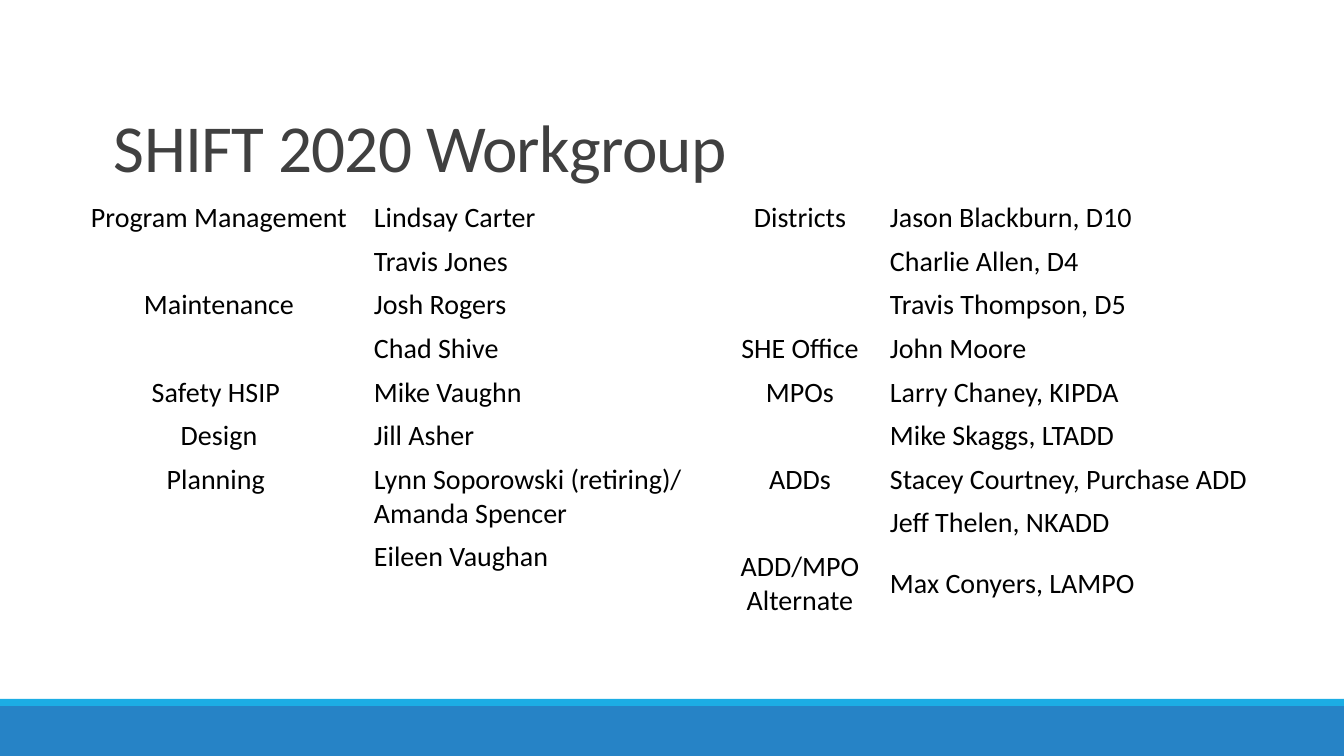
from lxml import etree
from pptx import Presentation
from pptx.dml.color import RGBColor
from pptx.enum.shapes import MSO_CONNECTOR, MSO_SHAPE
from pptx.enum.text import MSO_ANCHOR, PP_ALIGN
from pptx.oxml.ns import qn
from pptx.util import Emu, Pt

RECT = MSO_SHAPE.RECTANGLE
LINE = MSO_CONNECTOR.STRAIGHT
LEFT, CENTER = PP_ALIGN.LEFT, PP_ALIGN.CENTER
TOP, MIDDLE, BOTTOM = MSO_ANCHOR.TOP, MSO_ANCHOR.MIDDLE, MSO_ANCHOR.BOTTOM

WIDE, HIGH = 1344, 756
SCALE = 12192000 / WIDE
FONT = "Calibri"
PAD = 10
ROW = 40

STAFF = [
    ("Program Management", "Lindsay Carter"),
    ("", "Travis Jones"),
    ("Maintenance", "Josh Rogers"),
    ("", "Chad Shive"),
    ("Safety HSIP ", "Mike Vaughn"),
    ("Design", "Jill Asher"),
    ("Planning ", "Lynn Soporowski (retiring)/ Amanda Spencer"),
    ("", "Eileen Vaughan"),
]
AREAS = [
    ("Districts", "Jason Blackburn, D10"),
    ("", "Charlie Allen, D4"),
    ("", "Travis Thompson, D5"),
    ("SHE Office", "John Moore"),
    ("MPOs", "Larry Chaney, KIPDA"),
    ("", "Mike Skaggs, LTADD"),
    ("ADDs", "Stacey Courtney, Purchase ADD"),
    ("", "Jeff Thelen, NKADD"),
    ("ADD/MPO\nAlternate", "Max Conyers, LAMPO"),
]


def px(n):
    return Emu(round(n * SCALE))


def color(code):
    return RGBColor.from_string(code)


def style(para, size, code, align=LEFT):
    para.alignment = align
    para.font.name = FONT
    para.font.size = Pt(size)
    para.font.color.rgb = color(code)


def add_bar(slide, x, y, w, h, code):
    bar = slide.shapes.add_shape(RECT, px(x), px(y), px(w), px(h))
    bar.shadow.inherit = False
    bar.fill.solid()
    bar.fill.fore_color.rgb = color(code)
    bar.line.fill.background()


def add_foot(slide, x, y, w, h):
    strip = 7
    add_bar(slide, x, y + strip, w, h - strip, "2683C6")
    add_bar(slide, x, y, w, strip, "1CADE4")


def add_title(slide, x, y, w, h, text):
    # Rule under the title
    rule = slide.shapes.add_connector(
        LINE, px(x + 28), px(y + h), px(x + 1127), px(y + h))
    rule.line.color.rgb = color("808080")
    rule.line.width = Pt(0.5)
    etree.SubElement(rule._element.spPr, qn("a:effectLst"))

    # Title text
    box = slide.shapes.add_textbox(px(x), px(y), px(w), px(h))
    frame = box.text_frame
    frame.word_wrap = True
    frame.vertical_anchor = BOTTOM
    para = frame.paragraphs[0]
    run = para.add_run()
    run.text = text
    style(para, 48, "404040")
    para.line_spacing = 0.85
    run._r.get_or_add_rPr().set("spc", "-50")


def add_roster(slide, x, y, widths, rows):
    grid = slide.shapes.add_table(
        len(rows), len(widths), px(x), px(y),
        px(sum(widths)), px(ROW * len(rows))).table
    grid.first_row = False
    grid.horz_banding = False
    for col, wide in zip(grid.columns, widths):
        col.width = px(wide)
    for r, (group, name) in enumerate(rows):
        for c, (text, align) in enumerate([(group, CENTER), (name, LEFT)]):
            cell = grid.cell(r, c)
            cell.fill.background()
            cell.margin_left = cell.margin_right = cell.margin_top = px(PAD)
            cell.margin_bottom = 0
            # A name centres beside a two-line group
            cell.vertical_anchor = MIDDLE if c and "\n" in group else TOP
            cell.text = text
            for para in cell.text_frame.paragraphs:
                style(para, 20, "000000", align)


def main():
    deck = Presentation()
    deck.slide_width, deck.slide_height = px(WIDE), px(HIGH)
    slide = deck.slides.add_slide(deck.slide_layouts[6])
    add_foot(slide, 0, 699, WIDE, HIGH - 699)
    add_title(slide, 104, 45, 1159, 146, "SHIFT 2020 Workgroup")
    add_roster(slide, 74, 191, [290, 376], STAFF)
    add_roster(slide, 720, 191, [160, 383], AREAS)
    deck.save("out.pptx")


if __name__ == "__main__":
    main()
